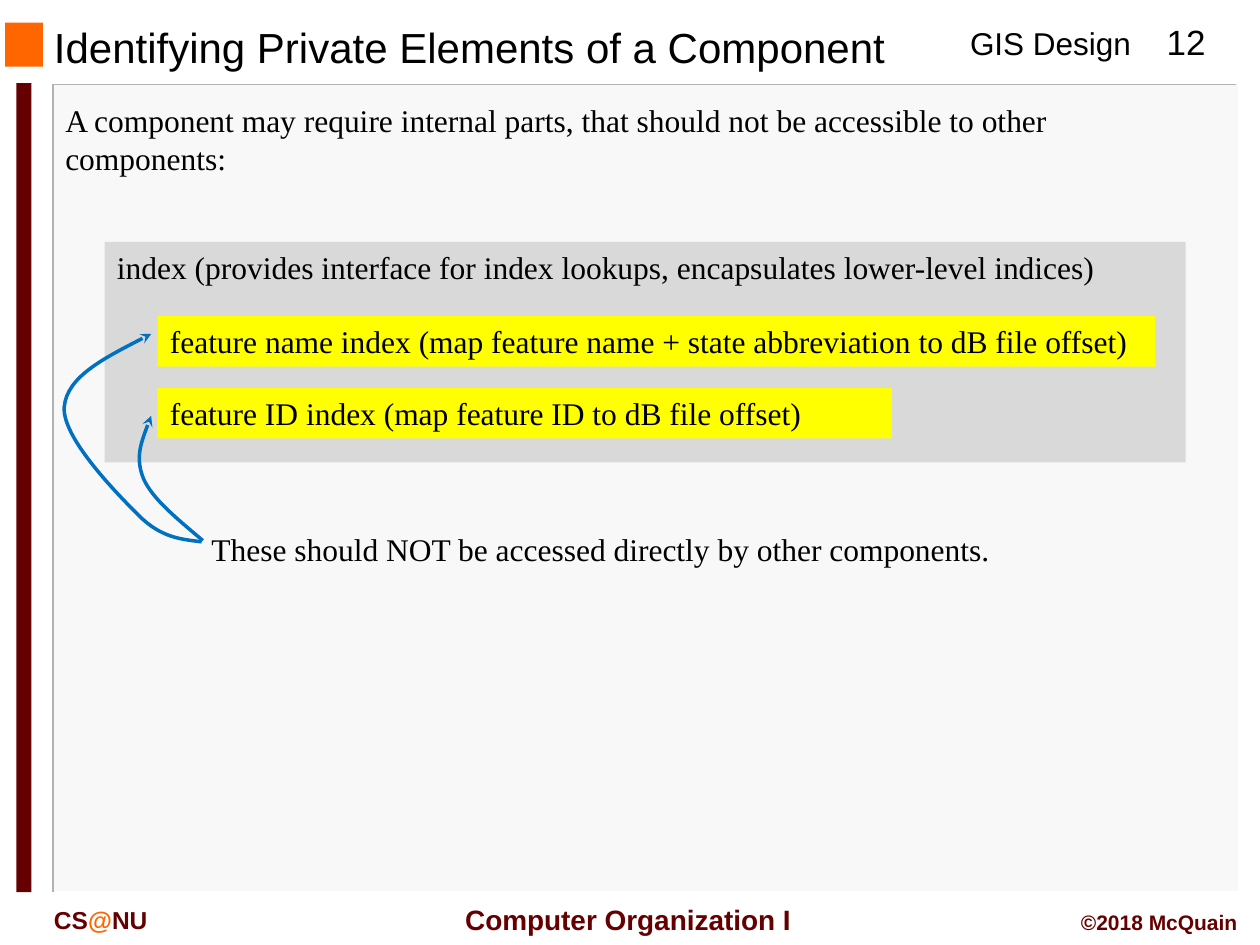
from lxml import etree
from pptx import Presentation
from pptx import util as u
from pptx.dml.color import RGBColor
from pptx.enum import shapes, text
from pptx.oxml.ns import qn

BLACK, MAROON, ORANGE = "000000", "660000", "FF6600"
SERIF, SANS = "Times New Roman", "Arial"
LEFT, CENTER, RIGHT = text.PP_ALIGN.LEFT, text.PP_ALIGN.CENTER, text.PP_ALIGN.RIGHT
TOP, MIDDLE = text.MSO_ANCHOR.TOP, text.MSO_ANCHOR.MIDDLE

deck = Presentation()
deck.slide_width, deck.slide_height = u.Inches(10), u.Inches(7.5)
page = deck.slides.add_slide(deck.slide_layouts[6])


def color(value):
    return RGBColor.from_string(value)


def write(box, spans, size=18, font=SERIF, bold=False, align=LEFT, anchor=TOP):
    frame = box.text_frame
    frame.word_wrap = True
    frame.vertical_anchor = anchor
    para = frame.paragraphs[0]
    para.alignment = align
    for words, ink in spans:
        span = para.add_run()
        span.text = words
        span.font.size = u.Pt(size)
        span.font.name = font
        span.font.bold = bold
        span.font.color.rgb = color(ink)


blocks = [
    ((0.43, 0.67, 9.4, 6.41), "F8F8F8", None),
    ((0.04, 0.18, 0.3, 0.35), ORANGE, None),
    ((0.13, 0.66, 0.12, 6.42), MAROON, None),
    ((0.83, 1.92, 8.58, 1.75), "D9D9D9",
     "index (provides interface for index lookups, encapsulates lower-level indices)"),
    ((1.25, 2.51, 7.92, 0.4), "FFFF00",
     "feature name index (map feature name + state abbreviation to dB file offset)"),
    ((1.25, 3.08, 5.83, 0.4), "FFFF00",
     "feature ID index (map feature ID to dB file offset)"),
]
for place, fill, words in blocks:
    block = page.shapes.add_shape(shapes.MSO_SHAPE.RECTANGLE, *map(u.Inches, place))
    block.shadow.inherit = False
    block.fill.solid()
    block.fill.fore_color.rgb = color(fill)
    block.line.fill.background()
    if words:
        write(block, [(words, BLACK)])

edges = [
    ((0.42, 0.67, 9.81, 0.67), "B2B2B2"),
    ((0.42, 0.67, 0.42, 7.08), "B2B2B2"),
    ((9.83, 0.67, 9.83, 7.08), "FFFFFF"),
    ((0.44, 7.08, 9.83, 7.08), "FFFFFF"),
]
for ends, ink in edges:
    edge = page.shapes.add_connector(shapes.MSO_CONNECTOR.STRAIGHT, *map(u.Inches, ends))
    edge.line.color.rgb = color(ink)
    edge.line.width = u.Pt(1)
    etree.SubElement(edge._element.spPr, qn("a:effectLst"))

labels = [
    ((0.33, 0.18, 7.15, 0.38), [("Identifying Private Elements of a Component", BLACK)],
     dict(size=24, font=SANS, anchor=MIDDLE)),
    ((7.6, 0.14, 1.49, 0.4), [("GIS Design", BLACK)], dict(font=SANS)),
    ((9.08, 0.11, 0.67, 0.43), [("12", BLACK)], dict(size=20, font=SANS, align=CENTER)),
    ((0.42, 0.75, 9.33, 0.71),
     [("A component may require internal parts, that should not be accessible "
       "to other components:", BLACK)], {}),
    ((1.58, 4.16, 6.54, 0.4),
     [("These should NOT be accessed directly by other components.", BLACK)], {}),
    ((0.33, 7.13, 1.5, 0.33), [("CS", MAROON), ("@", ORANGE), ("NU", MAROON)],
     dict(size=14, font=SANS, bold=True)),
    ((3.51, 7.11, 2.95, 0.37), [("Computer Organization I", MAROON)],
     dict(size=16, font=SANS, bold=True, align=CENTER, anchor=MIDDLE)),
    ((7, 7.17, 2.92, 0.3), [("©2018 McQuain", MAROON)],
     dict(size=12, font=SANS, bold=True, align=RIGHT)),
]
for place, spans, style in labels:
    write(page.shapes.add_textbox(*map(u.Inches, place)), spans, **style)

curves = [
    [(1.6, 4.3), (1.44, 4.28), (1.28, 4.27), (1.1, 4.09), (0.92, 3.91),
     (0.49, 3.47), (0.51, 3.23), (0.53, 2.99), (0.87, 2.82), (1.2, 2.65)],
    [(1.61, 4.29), (1.41, 4.12), (1.21, 3.96), (1.14, 3.8),
     (1.07, 3.63), (1.14, 3.46), (1.2, 3.3)],
]
for curve in curves:
    start, *controls = [(u.Inches(x), u.Inches(y)) for x, y in curve]
    builder = page.shapes.build_freeform(*start)
    builder.add_line_segments(controls, close=False)
    arrow = builder.convert_to_shape()
    arrow.shadow.inherit = False
    arrow.fill.background()
    arrow.line.color.rgb = color("0070C0")
    arrow.line.width = u.Pt(2)
    etree.SubElement(arrow.line._get_or_add_ln(), qn("a:tailEnd"), type="stealth")
    segments = list(arrow._element.iter(qn("a:lnTo")))
    for first in range(0, len(segments), 3):
        bend = etree.Element(qn("a:cubicBezTo"))
        segments[first].addprevious(bend)
        for segment in segments[first:first + 3]:
            bend.append(segment[0])
            segment.getparent().remove(segment)

deck.save("out.pptx")
